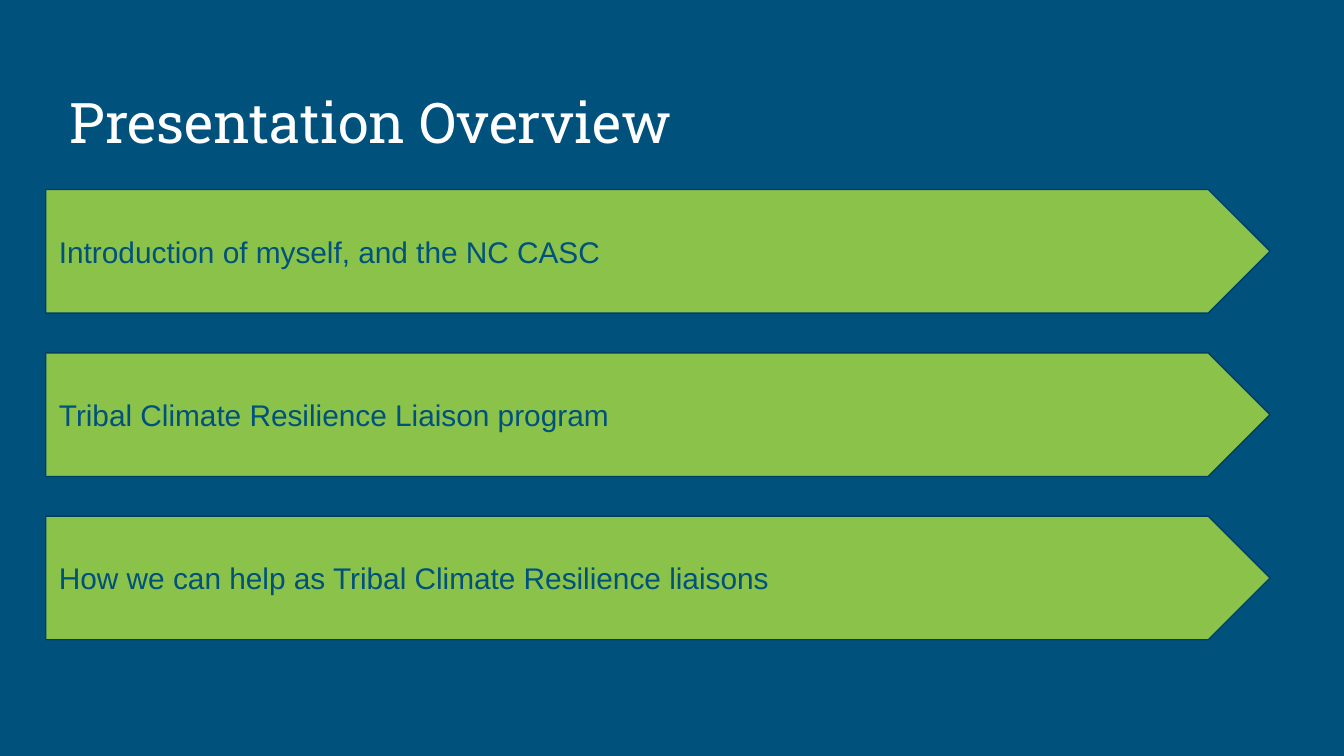
from dataclasses import dataclass

from pptx import Presentation
from pptx.dml.color import RGBColor
from pptx.enum.shapes import MSO_SHAPE
from pptx.enum.text import MSO_ANCHOR as Anchor, PP_ALIGN as Align
from pptx.util import Inches, Pt

COLORS = {"navy": "00517C", "green": "8BC34A", "edge": "004065", "white": "FFFFFF"}
TOPICS = (
    "Introduction of myself, and the NC CASC",
    "Tribal Climate Resilience Liaison program",
    "How we can help as Tribal Climate Resilience liaisons",
)
FIRST_TOP, LAST_TOP = 1.41, 3.84
PITCH = (LAST_TOP - FIRST_TOP) / (len(TOPICS) - 1)


@dataclass(frozen=True)
class Banner:
    text: str
    top: float
    left: float = 0.34
    width: float = 9.11
    height: float = 0.92


def color(name: str) -> RGBColor:
    return RGBColor.from_string(COLORS[name])


def write(sp, text: str, anchor: Anchor, font: str, size: int, ink: str) -> None:
    tf = sp.text_frame
    tf.word_wrap = True
    tf.vertical_anchor = anchor
    tf.margin_left = tf.margin_right = tf.margin_top = tf.margin_bottom = Inches(0.1)
    p = tf.paragraphs[0]
    p.text = text
    p.alignment = Align.LEFT
    p.font.name = font
    p.font.size = Pt(size)
    p.font.color.rgb = color(ink)


def draw_banner(slide, b: Banner) -> None:
    sp = slide.shapes.add_shape(MSO_SHAPE.PENTAGON, Inches(b.left), Inches(b.top),
                                Inches(b.width), Inches(b.height))
    sp.adjustments[0] = 0.5
    sp.shadow.inherit = False
    sp.fill.solid()
    sp.fill.fore_color.rgb = color("green")
    sp.line.color.rgb = color("edge")
    sp.line.width = Pt(0.75)
    write(sp, b.text, Anchor.MIDDLE, "Arial", 16, "navy")


def main() -> None:
    # Widescreen 16:9 page
    prs = Presentation()
    prs.slide_width = Inches(10)
    prs.slide_height = Inches(10 * 9 / 16)
    slide = prs.slides.add_slide(prs.slide_layouts[6])
    slide.background.fill.solid()
    slide.background.fill.fore_color.rgb = color("navy")

    # Title
    title = slide.shapes.add_textbox(Inches(0.42), Inches(0.5), Inches(9.15), Inches(0.75))
    write(title, "Presentation Overview", Anchor.BOTTOM, "Roboto Slab", 30, "white")

    # Evenly spaced topic banners
    for i, topic in enumerate(TOPICS):
        draw_banner(slide, Banner(topic, FIRST_TOP + i * PITCH))

    prs.save("out.pptx")


if __name__ == "__main__":
    main()
